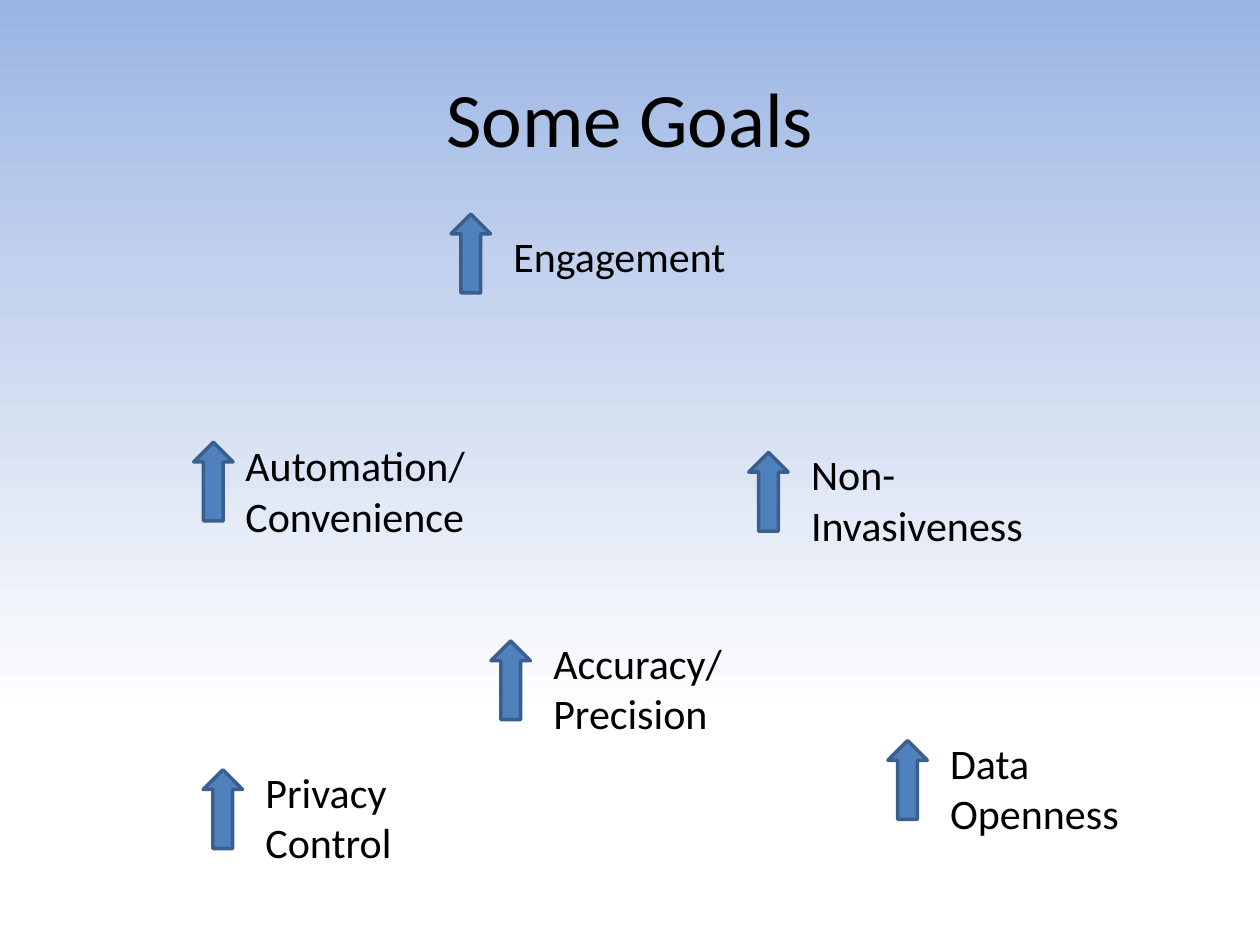
from copy import deepcopy

from pptx import Presentation
from pptx.dml.color import RGBColor
from pptx.enum import shapes, text
from pptx.oxml.ns import qn
from pptx.util import Pt

BLACK = RGBColor(0x00, 0x00, 0x00)
BLUE = RGBColor(0x4F, 0x81, 0xBD)
EDGE = RGBColor(0x3A, 0x5F, 0x8C)
SKY = [(0, RGBColor(0x9A, 0xB5, 0xE4)),
       (0.29, RGBColor(0xC2, 0xD1, 0xED)),
       (0.76, RGBColor(0xFF, 0xFF, 0xFF))]

ARROW = (22.5, 45)
LABEL = 164  # label width

# Arrow left and top, label offset from the arrow, wording (\v breaks a line)
GOALS = [
    (257.8, 122.4, 28.5, 5.8, "Engagement"),
    (110.7, 252.7, 22.5, -5, "Automation/\vConvenience"),
    (280.6, 366.3, 28.5, -5.6, "Accuracy/\vPrecision"),
    (507.4, 423.2, 28.5, -5.6, "Data\nOpenness"),
    (116.1, 439.9, 28.5, -5.6, "Privacy\vControl"),
    (427.9, 258.5, 28.5, -5.6, "Non-Invasiveness"),
]


def write(frame, words, size=24, color=BLACK, align=text.PP_ALIGN.LEFT,
          anchor=text.MSO_ANCHOR.TOP):
    frame.word_wrap = True
    frame.vertical_anchor = anchor
    frame.text = words
    for para in frame.paragraphs:
        para.alignment = align
        for run in para.runs:
            run.font.name = "Calibri"
            run.font.size = Pt(size)
            run.font.color.rgb = color


def paint(slide):
    """Vertical gradient background."""
    fill = slide.background.fill
    fill.gradient()
    fill.gradient_angle = 270
    stops = slide.element.find(".//" + qn("a:gsLst"))
    stops.append(deepcopy(stops[-1]))
    for stop, (place, color) in zip(fill.gradient_stops, SKY):
        stop.position = place
        stop.color.rgb = color


def head(slide, x, y, w, h):
    title = slide.shapes.title
    title.left, title.top, title.width, title.height = map(Pt, (x, y, w, h))
    write(title.text_frame, "Some Goals", size=44,
          align=text.PP_ALIGN.CENTER, anchor=text.MSO_ANCHOR.MIDDLE)


def goal(slide, x, y, dx, dy, words):
    """Up arrow grouped with its label."""
    group = slide.shapes.add_group_shape().shapes

    arrow = group.add_shape(shapes.MSO_SHAPE.UP_ARROW,
                            Pt(x), Pt(y), *map(Pt, ARROW))
    arrow.shadow.inherit = False
    arrow.fill.solid()
    arrow.fill.fore_color.rgb = BLUE
    arrow.line.color.rgb = EDGE
    arrow.line.width = Pt(2)

    tall = 36 if words == "Engagement" else 65.5
    label = group.add_textbox(Pt(x + dx), Pt(y + dy), Pt(LABEL), Pt(tall))
    write(label.text_frame, words)
    label.text_frame.auto_size = text.MSO_AUTO_SIZE.SHAPE_TO_FIT_TEXT


def main():
    deck = Presentation()
    deck.slide_width, deck.slide_height = Pt(720), Pt(540)
    slide = deck.slides.add_slide(deck.slide_layouts[5])
    paint(slide)
    head(slide, 36, 21.6, 648, 90)
    for item in GOALS:
        goal(slide, *item)
    deck.save("out.pptx")


if __name__ == "__main__":
    main()
